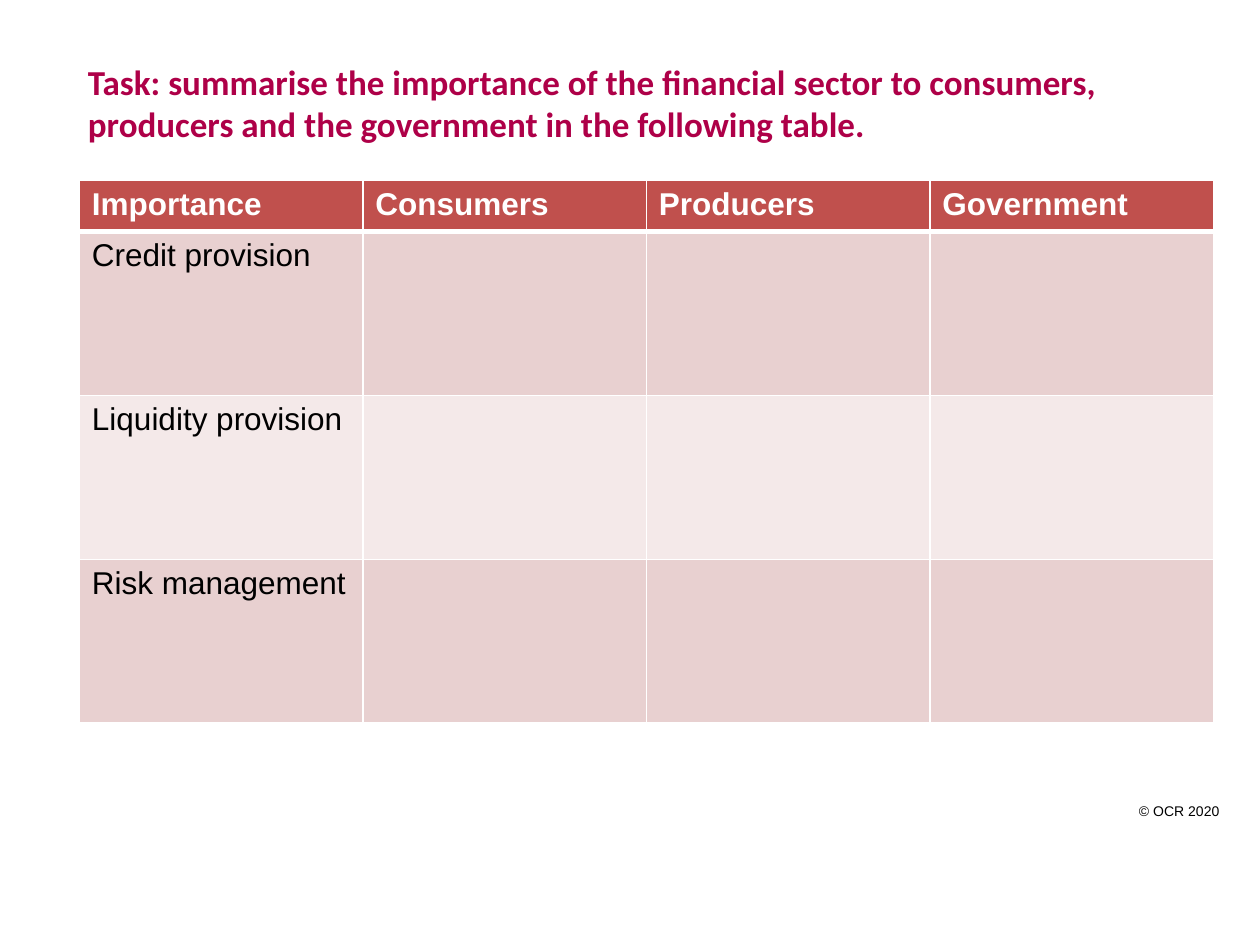
from lxml import etree
from pptx import Presentation
from pptx.dml.color import RGBColor
from pptx.enum.text import MSO_ANCHOR
from pptx.oxml.ns import qn
from pptx.util import Inches, Pt

MIDDLE, TOP = MSO_ANCHOR.MIDDLE, MSO_ANCHOR.TOP
WHITE, BLACK, CRIMSON = "FFFFFF", "000000", "AE0048"
HEADER_FILL, BAND_FILLS = "C0504D", ("F4E9E9", "E8D0D0")
ROWS = [
    ("Importance", "Consumers", "Producers", "Government"),
    ("Credit provision", "", "", ""),
    ("Liquidity provision", "", "", ""),
    ("Risk management", "", "", ""),
]


def rgb(value):
    return RGBColor.from_string(value)


class SlideBuilder:
    title = {"name": "Calibri", "size": Pt(20), "bold": True}
    header = {"name": "Arial", "size": Pt(18), "bold": True}
    body = {"name": "Arial", "size": Pt(18), "bold": False}
    small = {"name": "Arial", "size": Pt(8), "bold": False}

    def __init__(self, prs):
        self.s = prs.slides.add_slide(prs.slide_layouts[6])

    def fill_text(self, tf, text, style, color):
        p = tf.paragraphs[0]
        font = p.font
        if text:
            r = p.add_run()
            r.text = text
            font = r.font
        for key, value in style.items():
            setattr(font, key, value)
        font.color.rgb = rgb(color)

    def text(self, box, text, style, color, wrap=True, anchor=TOP):
        tf = self.s.shapes.add_textbox(*map(Inches, box)).text_frame
        tf.word_wrap = wrap
        tf.vertical_anchor = anchor
        self.fill_text(tf, text, style, color)

    def borders(self, cell, widths):
        tcPr = cell._tc.get_or_add_tcPr()
        for side, width in widths.items():
            ln = etree.SubElement(tcPr, qn(f"a:ln{side}"), w=str(Pt(width)))
            fill = etree.SubElement(ln, qn("a:solidFill"))
            etree.SubElement(fill, qn("a:srgbClr"), val=WHITE)

    def table(self, box, rows, header_height):
        left, top, width, height = box
        shape = self.s.shapes.add_table(len(rows), len(rows[0]), *map(Inches, box))
        table = shape.table
        for column in table.columns:
            column.width = Inches(width / len(rows[0]))
        row_height = (height - header_height) / (len(rows) - 1)
        for i, row in enumerate(rows):
            table.rows[i].height = Inches(row_height if i else header_height)
            style, color = (self.body, BLACK) if i else (self.header, WHITE)
            for j, text in enumerate(row):
                cell = table.cell(i, j)
                self.borders(cell, {"L": 1, "R": 1, "T": 3 if i == 1 else 1, "B": 1 if i else 3})
                cell.fill.solid()
                cell.fill.fore_color.rgb = rgb(BAND_FILLS[i % 2] if i else HEADER_FILL)
                self.fill_text(cell.text_frame, text, style, color)


def main():
    prs = Presentation()
    prs.slide_width, prs.slide_height = Inches(10), Inches(7.5)
    slide = SlideBuilder(prs)
    slide.text((8.94, 6.32, 0.85, 0.24), "© OCR 2020", slide.small, BLACK, wrap=False)
    slide.table((0.63, 1.43, 9, 4.31), ROWS, header_height=0.41)
    slide.text(
        (0.6, 0.22, 9, 1.18),
        "Task: summarise the importance of the financial sector to consumers, "
        "producers and the government in the following table.",
        slide.title, CRIMSON, anchor=MIDDLE,
    )
    prs.save("out.pptx")


if __name__ == "__main__":
    main()
